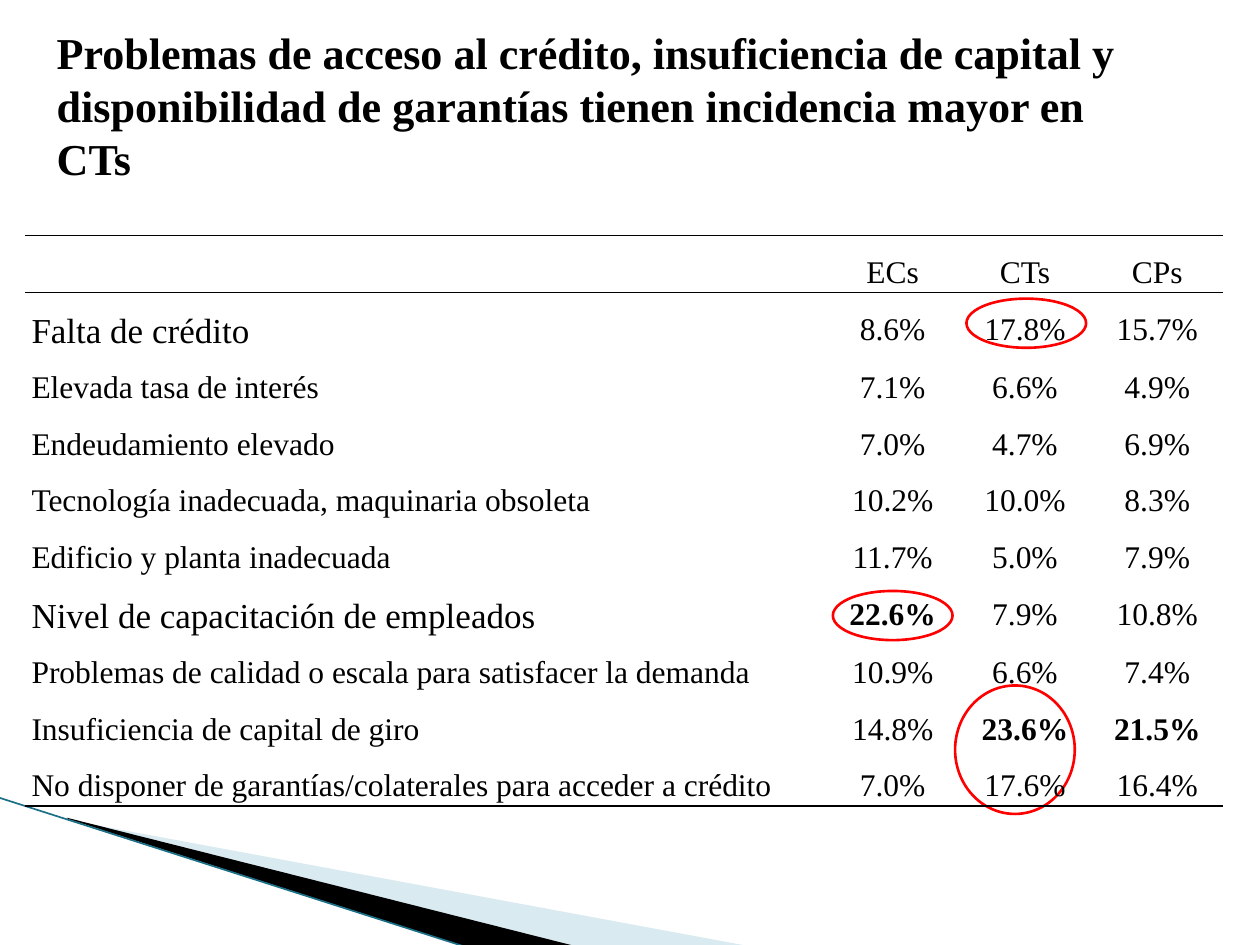
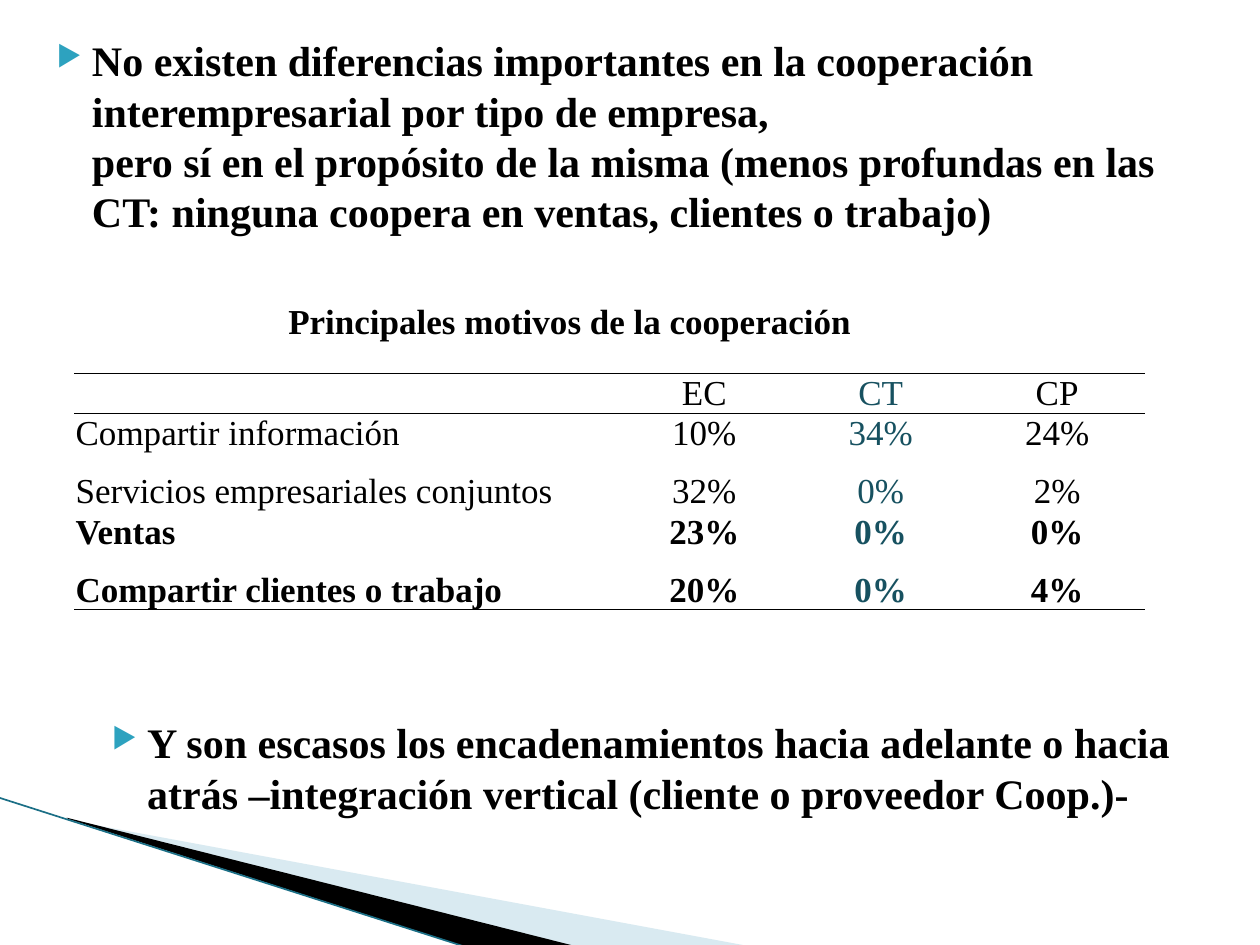
"""Build two slides on access to credit and cooperation between firms."""
from lxml import etree
from pptx import Presentation
from pptx.dml.color import RGBColor
from pptx.enum.shapes import MSO_CONNECTOR, MSO_SHAPE
from pptx.enum.text import MSO_ANCHOR, MSO_AUTO_SIZE, PP_ALIGN
from pptx.oxml.ns import qn
from pptx.util import Inches, Pt

BLACK = RGBColor(0x00, 0x00, 0x00)
RED = RGBColor(0xFF, 0x00, 0x00)
PALE_BLUE = RGBColor(0xA0, 0xCB, 0xDC)
EDGE_TEAL = RGBColor(0x1B, 0x6F, 0x86)
DARK_TEAL = RGBColor(0x17, 0x51, 0x60)
BULLET_BLUE = RGBColor(0x2D, 0xA2, 0xBF)

PALE_BAND = [(0.55, 6.51), (5.95, 7.51), (4.56, 7.51), (0.55, 6.5)]
BLACK_BAND = [(0.53, 6.49), (4.57, 7.51), (3.72, 7.52), (0.54, 6.5)]

PROBLEMS = [
    ("", "ECs", "CTs", "CPs"),
    ("Falta de crédito", "8.6%", "17.8%", "15.7%"),
    ("Elevada tasa de interés", "7.1%", "6.6%", "4.9%"),
    ("Endeudamiento elevado", "7.0%", "4.7%", "6.9%"),
    ("Tecnología inadecuada, maquinaria obsoleta", "10.2%", "10.0%", "8.3%"),
    ("Edificio y planta inadecuada", "11.7%", "5.0%", "7.9%"),
    ("Nivel de capacitación de empleados", "22.6%", "7.9%", "10.8%"),
    ("Problemas de calidad o escala para satisfacer la demanda", "10.9%", "6.6%", "7.4%"),
    ("Insuficiencia de capital de giro", "14.8%", "23.6%", "21.5%"),
    ("No disponer de garantías/colaterales para acceder a crédito", "7.0%", "17.6%", "16.4%"),
]
MOTIVES = [
    ("", "EC", "CT", "CP"),
    ("Compartir información", "10%", "34%", "24%"),
    ("Servicios empresariales conjuntos", "32%", "0%", "2%"),
    ("Ventas", "23%", "0%", "0%"),
    ("Compartir clientes o trabajo", "20%", "0%", "4%"),
]


class Deck:
    """Hold the shared style and the current slide."""

    font_name = "Times New Roman"

    def __init__(self):
        self.presentation = Presentation()
        self.presentation.slide_width = Inches(10)
        self.presentation.slide_height = Inches(7.5)
        self.slide = None

    def add_slide(self):
        layout = self.presentation.slide_layouts[5]
        self.slide = self.presentation.slides.add_slide(layout)
        self.add_band(PALE_BAND, PALE_BLUE, opacity=40)
        self.add_band(BLACK_BAND, BLACK)
        self.add_edge()

    def add_band(self, points, color, opacity=100):
        corners = [(Inches(x), Inches(y)) for x, y in points]
        builder = self.slide.shapes.build_freeform(*corners[0])
        builder.add_line_segments(corners[1:])
        band = builder.convert_to_shape()
        band.shadow.inherit = False
        band.line.fill.background()
        band.fill.solid()
        band.fill.fore_color.rgb = color
        if opacity < 100:
            fill_color = band.fill._xPr.find(qn("a:solidFill"))[0]
            etree.SubElement(fill_color, qn("a:alpha"), val=str(opacity * 1000))

    def add_edge(self):
        edge = self.slide.shapes.add_connector(
            MSO_CONNECTOR.STRAIGHT, Inches(-0.01), Inches(6.33), Inches(3.71), Inches(7.52))
        edge.line.color.rgb = EDGE_TEAL
        edge.line.width = Pt(0.95)
        etree.SubElement(edge._element.spPr, qn("a:effectLst"))

    def style(self, paragraph, size, bold=True, color=BLACK, alignment=PP_ALIGN.LEFT):
        paragraph.alignment = alignment
        font = paragraph.font
        font.name, font.size, font.bold = self.font_name, Pt(size), bold
        font.color.rgb = color

    def add_bullet(self, paragraph):
        properties = paragraph._p.get_or_add_pPr()
        properties.set("marL", str(Inches(0.4)))
        properties.set("indent", str(Inches(-0.28)))
        bullet_color = etree.SubElement(properties, qn("a:buClr"))
        etree.SubElement(bullet_color, qn("a:srgbClr"), val=str(BULLET_BLUE))
        etree.SubElement(properties, qn("a:buSzPct"), val="68000")
        etree.SubElement(properties, qn("a:buChar"), char="▶")

    def fill_text(self, shape, text, size, bullet=False):
        frame = shape.text_frame
        frame.word_wrap = True
        frame.auto_size = MSO_AUTO_SIZE.NONE
        frame.text = text
        paragraph = frame.paragraphs[0]
        if bullet:
            self.add_bullet(paragraph)
        self.style(paragraph, size)

    def set_title(self, text, left, top, width, height, size, bullet=False):
        title = self.slide.shapes.title
        title.left, title.top = Inches(left), Inches(top)
        title.width, title.height = Inches(width), Inches(height)
        self.fill_text(title, text, size, bullet)
        title.text_frame.vertical_anchor = MSO_ANCHOR.MIDDLE

    def add_text(self, text, left, top, width, height, size, bullet=False):
        box = self.slide.shapes.add_textbox(
            Inches(left), Inches(top), Inches(width), Inches(height))
        self.fill_text(box, text, size, bullet)

    def add_ring(self, left, top, width, height):
        ring = self.slide.shapes.add_shape(
            MSO_SHAPE.OVAL, Inches(left), Inches(top), Inches(width), Inches(height))
        ring.shadow.inherit = False
        ring.fill.background()
        ring.line.color.rgb = RED
        ring.line.width = Pt(1.5)

    def set_borders(self, cell, top, bottom, width):
        properties = cell._tc.get_or_add_tcPr()
        for side, ruled in (("L", False), ("R", False), ("T", top), ("B", bottom)):
            border = etree.SubElement(properties, qn(f"a:ln{side}"), w=str(Pt(width)))
            if ruled:
                fill = etree.SubElement(border, qn("a:solidFill"))
                etree.SubElement(fill, qn("a:srgbClr"), val=str(BLACK))
            else:
                etree.SubElement(border, qn("a:noFill"))

    def add_table(self, rows, left, top, column_widths, row_heights, size, rule_width,
                  margins, anchor, bold_cells, large_rows=(), line_spacing=None,
                  label_alignment=PP_ALIGN.LEFT, accent_column=None):
        table = self.slide.shapes.add_table(
            len(rows), len(column_widths), Inches(left), Inches(top),
            Inches(sum(column_widths)), Inches(sum(row_heights))).table
        table.first_row = table.horz_banding = False
        for column, width in zip(table.columns, column_widths):
            column.width = Inches(width)
        for row, height in zip(table.rows, row_heights):
            row.height = Inches(height)
        rules = {0, 1, len(rows)}
        side_margin, top_margin = margins
        for i, values in enumerate(rows):
            for j, value in enumerate(values):
                cell = table.cell(i, j)
                self.set_borders(cell, i in rules, i + 1 in rules, rule_width)
                cell.fill.background()
                cell.margin_left = cell.margin_right = Inches(side_margin)
                cell.margin_top, cell.margin_bottom = Inches(top_margin), 0
                cell.vertical_anchor = anchor
                cell.text = value
                paragraph = cell.text_frame.paragraphs[0]
                if line_spacing:
                    paragraph.line_spacing = line_spacing
                self.style(paragraph,
                           20 if j == 0 and i in large_rows else size,
                           (i, j) in bold_cells,
                           DARK_TEAL if j == accent_column else BLACK,
                           PP_ALIGN.CENTER if j else label_alignment)


def build_problems(deck):
    deck.add_slide()
    deck.set_title("Problemas de acceso al crédito, insuficiencia de capital y disponibilidad "
                   "de garantías tienen incidencia mayor en CTs", 0.35, 0.21, 9, 1.25, 25.2)
    for ring in ((7.67, 2.37, 0.95, 0.39), (6.61, 4.69, 0.95, 0.39), (7.58, 5.44, 0.95, 1.02)):
        deck.add_ring(*ring)
    deck.add_table(PROBLEMS, 0.2, 1.87, [6.36] + [1.05] * 3, [0.45] * len(PROBLEMS),
                   size=18, rule_width=1, margins=(0.05, 0), anchor=MSO_ANCHOR.MIDDLE,
                   bold_cells={(6, 1), (8, 2), (8, 3)}, large_rows={1, 6},
                   line_spacing=1.5, label_alignment=PP_ALIGN.JUSTIFY)


def build_motives(deck):
    deck.add_slide()
    deck.set_title("No existen diferencias importantes en la cooperación interempresarial por "
                   "tipo de empresa,\vpero sí en el propósito de la misma (menos profundas en "
                   "las CT: ninguna coopera en ventas, clientes o trabajo)",
                   0.23, 0.21, 9.61, 1.73, 24, bullet=True)
    deck.add_table(MOTIVES, 0.59, 2.96, [4.3] + [1.4] * 3, [0.32, 0.32, 0.46, 0.32, 0.46],
                   size=20, rule_width=0.5, margins=(0.01, 0.01), anchor=MSO_ANCHOR.BOTTOM,
                   bold_cells={(i, j) for i in (3, 4) for j in range(4)}, accent_column=2)
    deck.add_text("Principales motivos de la cooperación", 2.19, 2.33, 5.67, 0.44, 20)
    deck.add_text("Y son escasos los encadenamientos hacia adelante o hacia atrás –integración "
                  "vertical (cliente o proveedor Coop.)-", 0.67, 5.64, 9.13, 1.02, 24, bullet=True)


def main():
    deck = Deck()
    build_problems(deck)
    build_motives(deck)
    deck.presentation.save("out.pptx")


if __name__ == "__main__":
    main()
